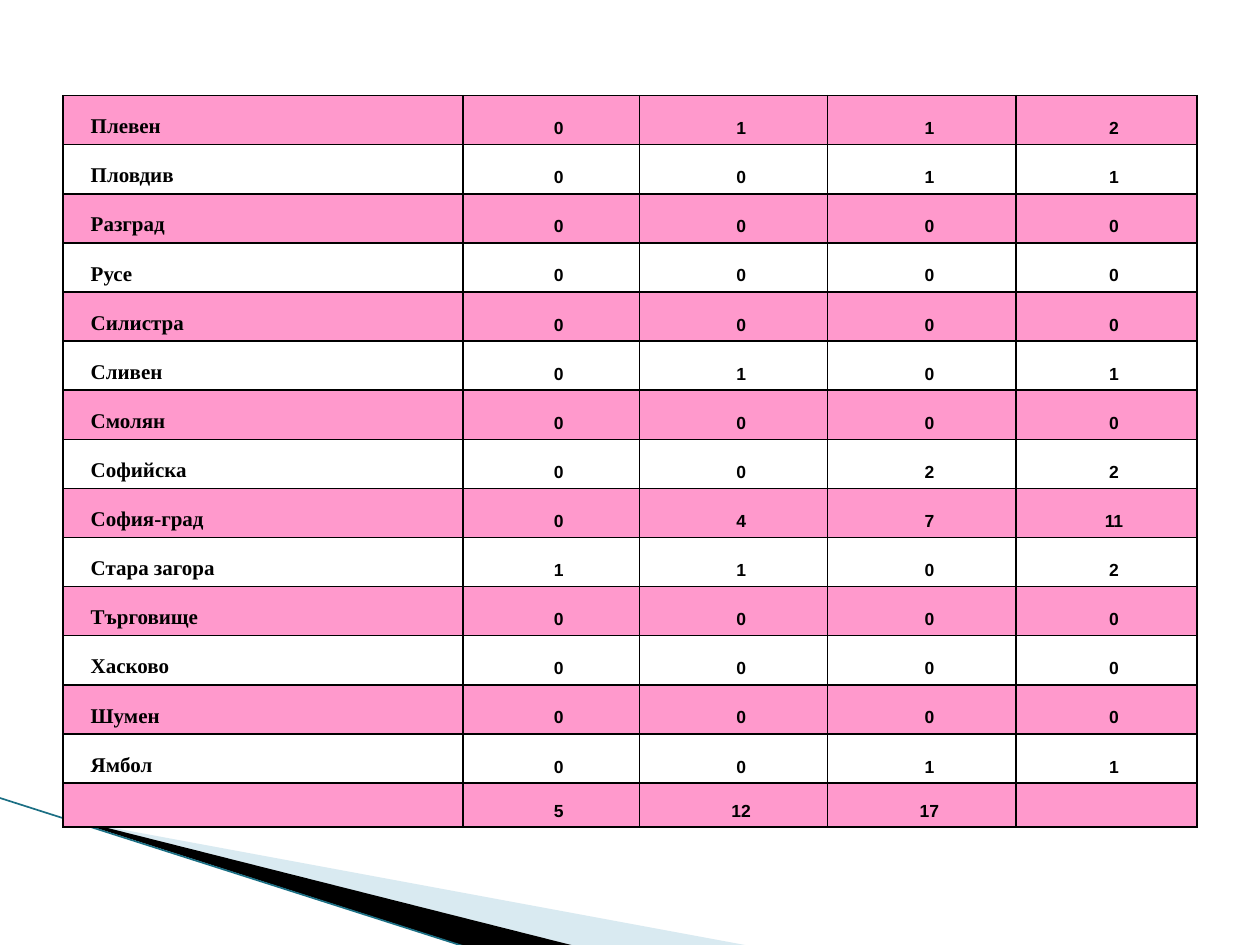
from lxml import etree
from pptx import Presentation
from pptx.dml.color import RGBColor
from pptx.enum.shapes import MSO_CONNECTOR
from pptx.enum.text import MSO_ANCHOR, PP_ALIGN
from pptx.oxml.ns import qn
from pptx.util import Pt

STRAIGHT = MSO_CONNECTOR.STRAIGHT
BOTTOM = MSO_ANCHOR.BOTTOM
LEFT, CENTER = PP_ALIGN.LEFT, PP_ALIGN.CENTER

PINK, WHITE, BLACK = "FF99CC", "FFFFFF", "000000"
ROWS = [
    ("Плевен", 0, 1, 1, 2),
    ("Пловдив", 0, 0, 1, 1),
    ("Разград", 0, 0, 0, 0),
    ("Русе", 0, 0, 0, 0),
    ("Силистра", 0, 0, 0, 0),
    ("Сливен", 0, 1, 0, 1),
    ("Смолян", 0, 0, 0, 0),
    ("Софийска", 0, 0, 2, 2),
    ("София-град", 0, 4, 7, 11),
    ("Стара загора", 1, 1, 0, 2),
    ("Търговище", 0, 0, 0, 0),
    ("Хасково", 0, 0, 0, 0),
    ("Шумен", 0, 0, 0, 0),
    ("Ямбол", 0, 0, 1, 1),
    ("", 5, 12, 17, ""),
]
COL_WIDTHS = [228.6, 100.8, 107.6, 107.6, 103.4]
ROW_HEIGHT, TOTAL_HEIGHT = 28.08, 25.2
TABLE_LEFT, TABLE_TOP = 36, 54.6
WEDGES = [
    ("A0CBDC", 40, [(39.6, 468.5), (428.4, 540.5), (328.3, 540.5), (39.6, 468)]),
    (BLACK, 100, [(38.2, 467.3), (329, 540.7), (267.8, 541.4), (38.9, 468)]),
]
EDGE = (-0.7, 455.8, 267.1, 541.4)
EDGE_COLOR = "1B6F84"


def rgb(color):
    return RGBColor.from_string(color)


def add_wedge(slide, color, opacity, points):
    pts = [(Pt(x), Pt(y)) for x, y in points]
    fb = slide.shapes.build_freeform(*pts[0], scale=1.0)
    fb.add_line_segments(pts[1:], close=True)
    sp = fb.convert_to_shape()
    sp.shadow.inherit = False
    sp.fill.solid()
    sp.fill.fore_color.rgb = rgb(color)
    sp.line.fill.background()
    if opacity < 100:
        clr = sp._element.spPr.find(".//" + qn("a:srgbClr"))
        etree.SubElement(clr, qn("a:alpha"), val=str(opacity * 1000))


def add_edge(slide):
    line = slide.shapes.add_connector(STRAIGHT, *map(Pt, EDGE))
    line.line.color.rgb = rgb(EDGE_COLOR)
    line.line.width = Pt(0.95)
    etree.SubElement(line._element.spPr, qn("a:effectLst"))


def add_borders(cell):
    tcPr = cell._tc.get_or_add_tcPr()
    for i, side in enumerate(("lnL", "lnR", "lnT", "lnB")):
        ln = etree.Element(qn("a:" + side), w=str(Pt(1)))
        fill = etree.SubElement(ln, qn("a:solidFill"))
        etree.SubElement(fill, qn("a:srgbClr"), val=BLACK)
        tcPr.insert(i, ln)


def fill_cell(cell, value, color, is_name):
    cell.fill.solid()
    cell.fill.fore_color.rgb = rgb(color)
    add_borders(cell)
    cell.vertical_anchor = BOTTOM
    p = cell.text_frame.paragraphs[0]
    if value == "":
        etree.SubElement(p._p, qn("a:endParaRPr"), sz="1000")
        return
    p.alignment = LEFT if is_name else CENTER
    pPr = p._p.get_or_add_pPr()
    pPr.set("marL", str(Pt(28.8)))
    pPr.set("indent", str(Pt(-20.16)))
    r = p.add_run()
    r.text = str(value)
    r.font.name = "Times New Roman" if is_name else "Arial"
    r.font.size = Pt(12 if is_name else 10)
    r.font.bold = True
    r.font.color.rgb = rgb(BLACK)


def add_region_table(slide):
    heights = [ROW_HEIGHT] * (len(ROWS) - 1) + [TOTAL_HEIGHT]
    frame = slide.shapes.add_table(
        len(ROWS), len(COL_WIDTHS), Pt(TABLE_LEFT), Pt(TABLE_TOP),
        Pt(sum(COL_WIDTHS)), Pt(sum(heights)))
    table = frame.table
    table.first_row = False
    table.horz_banding = False
    for col, width in zip(table.columns, COL_WIDTHS):
        col.width = Pt(width)
    for i, (values, height) in enumerate(zip(ROWS, heights)):
        table.rows[i].height = Pt(height)
        for j, value in enumerate(values):
            fill_cell(table.cell(i, j), value, WHITE if i % 2 else PINK, j == 0)


def main():
    prs = Presentation()
    prs.slide_width, prs.slide_height = Pt(720), Pt(540)
    slide = prs.slides.add_slide(prs.slide_layouts[6])
    for wedge in WEDGES:
        add_wedge(slide, *wedge)
    add_edge(slide)
    add_region_table(slide)
    prs.save("out.pptx")


if __name__ == "__main__":
    main()
